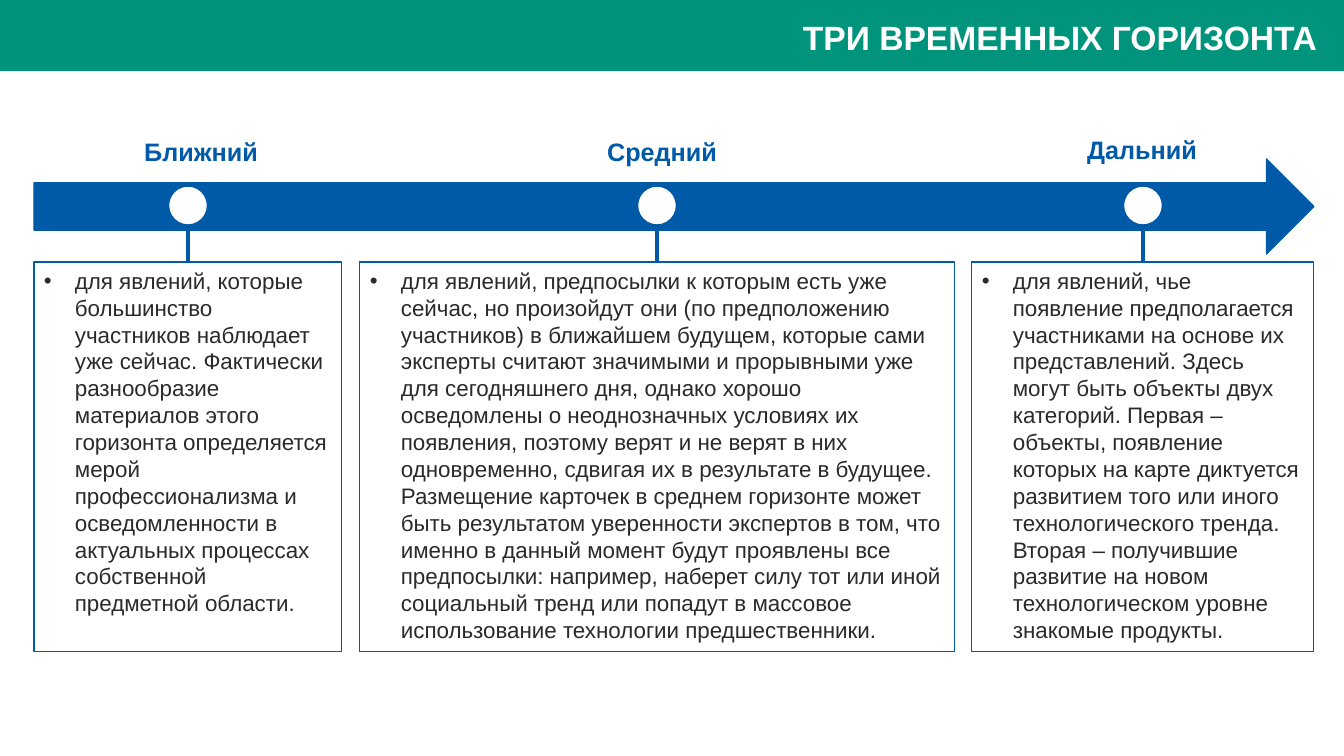
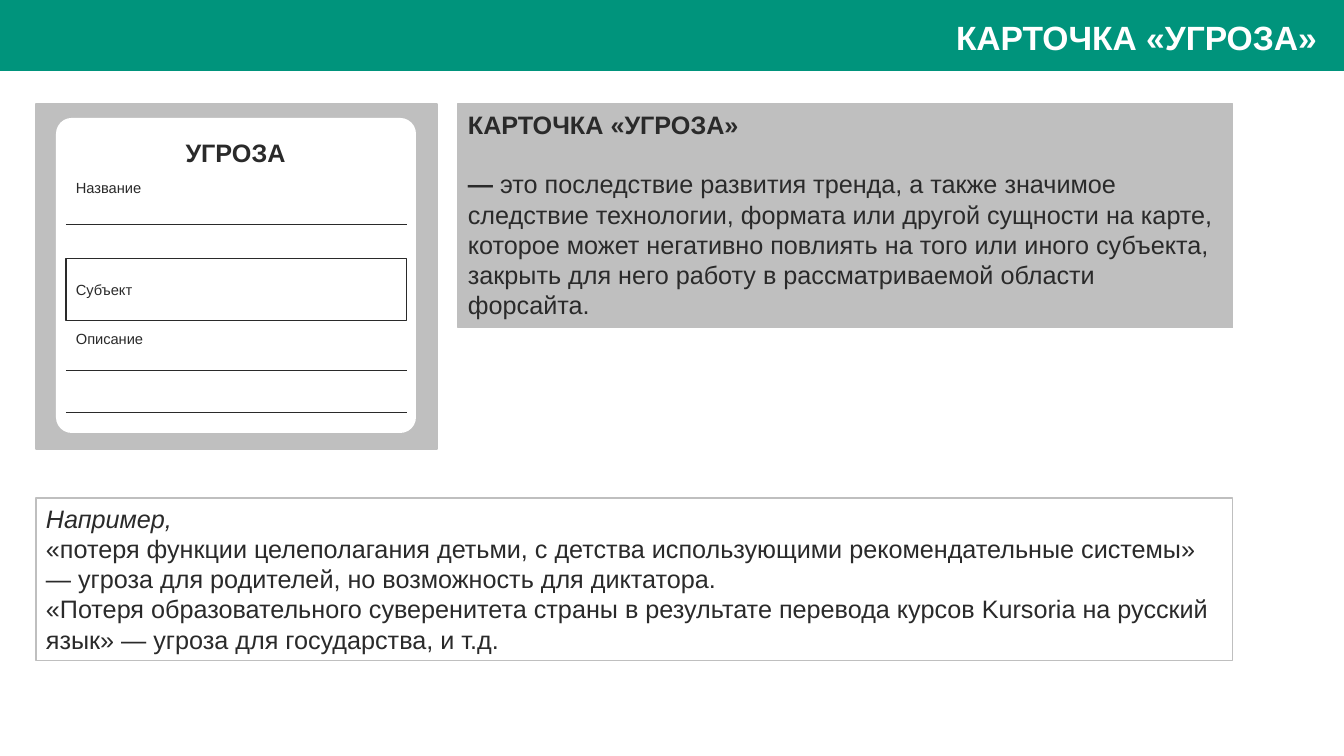
from lxml import etree
from pptx import Presentation
from pptx.dml.color import RGBColor
from pptx.enum.shapes import MSO_CONNECTOR, MSO_SHAPE
from pptx.enum.text import MSO_ANCHOR, PP_ALIGN
from pptx.oxml.ns import qn
from pptx.util import Emu, Pt

RECT = MSO_SHAPE.RECTANGLE
ROUNDED = MSO_SHAPE.ROUNDED_RECTANGLE
ARROW = MSO_SHAPE.RIGHT_ARROW
CIRCLE = MSO_SHAPE.OVAL
STRAIGHT = MSO_CONNECTOR.STRAIGHT
LEFT, CENTER, RIGHT = PP_ALIGN.LEFT, PP_ALIGN.CENTER, PP_ALIGN.RIGHT
TOP, MIDDLE = MSO_ANCHOR.TOP, MSO_ANCHOR.MIDDLE

PX = 914400 / 100.8
WIDTH, HEIGHT = 1344, 756
FONT = "Arial"
COLORS = {
    "band": "00947C",
    "blue": "005AA7",
    "gray": "BFBFBF",
    "ink": "2A2A2A",
    "white": "FFFFFF",
}


def draw(page, kind, place, fill=None, line=None, weight=0.75):
    shape = page.shapes.add_shape(kind, *[Emu(round(n * PX)) for n in place])
    shape.shadow.inherit = False
    if fill:
        shape.fill.solid()
        shape.fill.fore_color.rgb = RGBColor.from_string(COLORS[fill])
    else:
        shape.fill.background()
    if line:
        shape.line.color.rgb = RGBColor.from_string(COLORS[line])
        shape.line.width = Pt(weight)
    else:
        shape.line.fill.background()
    return shape


def write(box, text, size=18, color="ink", bold=False, italic=False, align=LEFT,
          anchor=TOP, wrap=True, bullet=False, before=0, same_line=False):
    frame = box.text_frame
    frame.word_wrap = wrap
    frame.vertical_anchor = anchor
    para = frame.paragraphs[-1]
    if para.runs and not same_line:
        para = frame.add_paragraph()
    if not same_line:
        para.alignment = align
        if before:
            para.space_before = Pt(before)
    if bullet:
        indent = round(31 * PX)
        properties = para._p.get_or_add_pPr()
        properties.set("marL", str(indent))
        properties.set("indent", str(-indent))
        etree.SubElement(properties, qn("a:buFont")).set("typeface", FONT)
        etree.SubElement(properties, qn("a:buChar")).set("char", "•")
    span = para.add_run()
    span.text = text
    span.font.name = FONT
    span.font.size = Pt(size)
    span.font.bold = bold
    span.font.italic = italic
    span.font.color.rgb = RGBColor.from_string(COLORS[color])


deck = Presentation()
deck.slide_width = Emu(round(WIDTH * PX))
deck.slide_height = Emu(round(HEIGHT * PX))

pages = []
for title in ["ТРИ ВРЕМЕННЫХ ГОРИЗОНТА", "КАРТОЧКА «УГРОЗА»"]:
    page = deck.slides.add_slide(deck.slide_layouts[6])
    draw(page, RECT, (0, 0, WIDTH, 71), fill="band")
    title_box = page.shapes.add_textbox(*[Emu(round(n * PX)) for n in (134, 12, 1188, 50)])
    frame = title_box.text_frame
    frame.margin_left = frame.margin_right = frame.margin_top = frame.margin_bottom = Emu(round(5 * PX))
    write(title_box, title, size=24, color="white", bold=True, align=RIGHT)
    pages.append(page)
horizons_page, card_page = pages

HORIZONS = [
    ("Ближний", 201, 131, 188, 34, 308,
     "для явлений, которые большинство участников наблюдает уже сейчас. "
     "Фактически разнообразие материалов этого горизонта определяется мерой "
     "профессионализма и осведомленности в актуальных процессах собственной "
     "предметной области."),
    ("Средний", 662, 131, 657, 360, 595,
     "для явлений, предпосылки к которым есть уже сейчас, но произойдут они "
     "(по предположению участников) в ближайшем будущем, которые сами эксперты "
     "считают значимыми и прорывными уже для сегодняшнего дня, однако хорошо "
     "осведомлены о неоднозначных условиях их появления, поэтому верят и не "
     "верят в них одновременно, сдвигая их в результате в будущее. Размещение "
     "карточек в среднем горизонте может быть результатом уверенности экспертов "
     "в том, что именно в данный момент будут проявлены все предпосылки: "
     "например, наберет силу тот или иной социальный тренд или попадут в "
     "массовое использование технологии предшественники."),
    ("Дальний", 1142, 129, 1143, 972, 342,
     "для явлений, чье появление предполагается участниками на основе их "
     "представлений. Здесь могут быть объекты двух категорий. Первая – объекты, "
     "появление которых на карте диктуется развитием того или иного "
     "технологического тренда. Вторая – получившие развитие на новом "
     "технологическом уровне знакомые продукты."),
]
BOX_TOP, BOX_HEIGHT = 262, 390
DOT, DOT_TOP = 39, 186

lines = []
draw(horizons_page, ARROW, (34, 159, 1280, 95), fill="blue", line="blue", weight=1)
for name, label_center, label_top, dot_center, left, width, body in HORIZONS:
    body_box = draw(horizons_page, RECT, (left, BOX_TOP, width, BOX_HEIGHT), line="blue")
    write(body_box, body, size=16, bullet=True)
    draw(horizons_page, CIRCLE, (dot_center - DOT / 2, DOT_TOP, DOT, DOT),
         fill="white", line="blue", weight=1)
    lines.append((horizons_page, (dot_center, DOT_TOP + DOT, dot_center, BOX_TOP), "blue", 3))
    label = draw(horizons_page, RECT, (label_center - 67, label_top, 134, 40))
    write(label, name, color="blue", bold=True, align=CENTER, wrap=False)

CARD_LEFT, CARD_RIGHT = 66, 407
backdrop = draw(card_page, ROUNDED, (36, 104, 401, 345), fill="gray", line="gray", weight=2)
backdrop.adjustments[0] = 0
card = draw(card_page, ROUNDED, (56, 118, 360, 315), fill="white")
card.adjustments[0] = 0.05
heading = draw(card_page, RECT, (156, 132, 159, 40))
write(heading, "УГРОЗА", bold=True, align=CENTER)
for name, top, height, border in [
    ("Название", 174, 28, None),
    ("Субъект", 259, 62, "ink"),
    ("Описание", 325, 28, None),
]:
    field = draw(card_page, RECT, (CARD_LEFT, top, CARD_RIGHT - CARD_LEFT, height), line=border)
    write(field, name, size=10.5, anchor=MIDDLE)
for y in (225, 371, 413):
    lines.append((card_page, (CARD_LEFT, y, CARD_RIGHT, y), "ink", 0.75))

definition = draw(card_page, RECT, (458, 104, 775, 224), fill="gray", line="gray")
write(definition, "КАРТОЧКА «УГРОЗА»", bold=True)
write(definition, "— ", bold=True, before=21)
write(definition,
      "это последствие развития тренда, а также значимое следствие технологии, "
      "формата или другой сущности на карте, которое может негативно повлиять на "
      "того или иного субъекта, закрыть для него работу в рассматриваемой области "
      "форсайта.", same_line=True)

example = draw(card_page, RECT, (36, 498, 1197, 163), line="gray")
write(example, "Например,", italic=True)
write(example,
      "«потеря функции целеполагания детьми, с детства использующими "
      "рекомендательные системы» — угроза для родителей, но возможность для "
      "диктатора.")
write(example,
      "«Потеря образовательного суверенитета страны в результате перевода курсов "
      "Kursoria на русский язык» — угроза для государства, и т.д.")

for page, ends, color, weight in lines:
    connector = page.shapes.add_connector(STRAIGHT, *[Emu(round(n * PX)) for n in ends])
    connector.line.color.rgb = RGBColor.from_string(COLORS[color])
    connector.line.width = Pt(weight)
    etree.SubElement(connector._element.spPr, qn("a:effectLst"))

deck.save("out.pptx")
